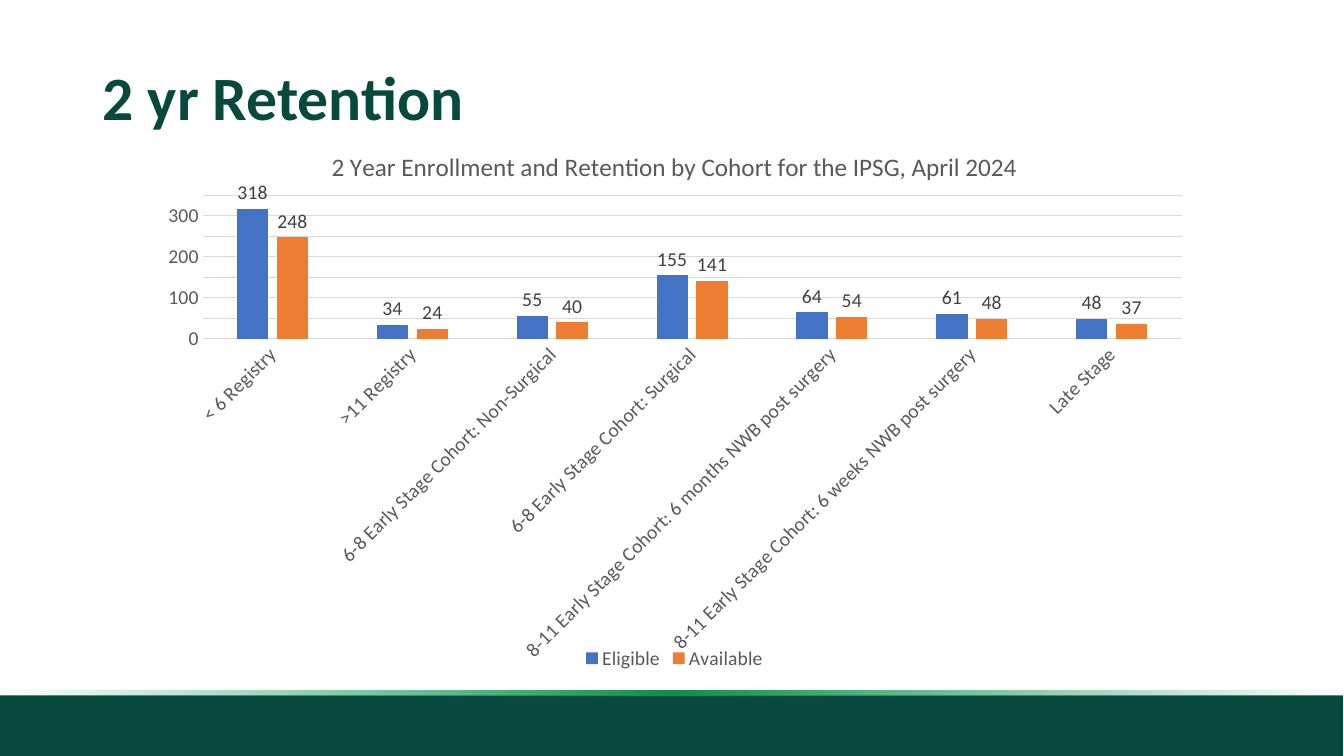
from lxml import etree
from pptx import Presentation
from pptx.chart.data import CategoryChartData
from pptx.dml.color import RGBColor
from pptx.enum.chart import XL_CHART_TYPE, XL_LABEL_POSITION, XL_LEGEND_POSITION, XL_TICK_MARK
from pptx.enum.shapes import MSO_SHAPE
from pptx.enum.text import MSO_ANCHOR, PP_ALIGN
from pptx.oxml import parse_xml
from pptx.oxml.ns import nsdecls, qn
from pptx.util import Inches, Pt

COLUMNS = XL_CHART_TYPE.COLUMN_CLUSTERED
OUTSIDE_END = XL_LABEL_POSITION.OUTSIDE_END
LEGEND_BOTTOM = XL_LEGEND_POSITION.BOTTOM
NO_TICKS = XL_TICK_MARK.NONE
RECTANGLE = MSO_SHAPE.RECTANGLE
MIDDLE = MSO_ANCHOR.MIDDLE
LEFT = PP_ALIGN.LEFT

DARK_GREEN = RGBColor(0x07, 0x49, 0x3C)
BLUE = RGBColor(0x44, 0x72, 0xC4)
ORANGE = RGBColor(0xED, 0x7D, 0x31)
GRAY = RGBColor(0x59, 0x59, 0x59)
LABEL_GRAY = RGBColor(0x40, 0x40, 0x40)
GRID_GRAY = RGBColor(0xD9, 0xD9, 0xD9)
STRIPE_EDGE_LEFT = RGBColor(0x0D, 0x9D, 0x4F)
STRIPE_CENTER = RGBColor(0x0C, 0x90, 0x49)
STRIPE_EDGE_RIGHT = RGBColor(0x0F, 0xAB, 0x56)

FONT = "Calibri"
CHART_LEFT, CHART_TOP, CHART_WIDTH, CHART_HEIGHT = 1.46, 1.27, 10.46, 5.42
PLOT_LEFT, PLOT_TOP, PLOT_WIDTH, PLOT_HEIGHT = 2.01, 1.94, 9.71, 1.42
COHORTS = [
    "< 6 Registry",
    ">11 Registry",
    "6-8 Early Stage Cohort: Non-Surgical",
    "6-8 Early Stage Cohort: Surgical",
    "8-11 Early Stage Cohort: 6 months NWB post surgery",
    "8-11 Early Stage Cohort: 6 weeks NWB post surgery",
    "Late Stage",
]
ENROLLMENT = [
    ("Eligible", [318, 34, 55, 155, 64, 61, 48], BLUE),
    ("Available", [248, 24, 40, 141, 54, 48, 37], ORANGE),
]


def style_font(font, size, color, bold=False):
    font.name = FONT
    font.size = Pt(size)
    font.bold = bold
    font.color.rgb = color


def style_line(line, color):
    line.color.rgb = color
    line.width = Pt(0.75)


def add_band(slide, left, top, width, height):
    band = slide.shapes.add_shape(
        RECTANGLE, Inches(left), Inches(top), Inches(width), Inches(height))
    band.shadow.inherit = False
    band.line.fill.background()
    band.fill.solid()
    band.fill.fore_color.rgb = DARK_GREEN
    return band


def fade_to_edges(band):
    """Fill a band with green that turns transparent at both ends."""
    stops = [(0, STRIPE_EDGE_LEFT, 0), (50, STRIPE_CENTER, 100), (100, STRIPE_EDGE_RIGHT, 0)]
    gradient = parse_xml(f'<a:gradFill {nsdecls("a")} rotWithShape="1"><a:gsLst/>'
                         '<a:lin ang="10800000" scaled="0"/></a:gradFill>')
    for position, color, opacity in stops:
        stop = etree.SubElement(gradient[0], qn("a:gs"), pos=str(position * 1000))
        rgb = etree.SubElement(stop, qn("a:srgbClr"), val=str(color))
        etree.SubElement(rgb, qn("a:alpha"), val=str(opacity * 1000))
    properties = band._element.spPr
    properties.replace(properties.find(qn("a:solidFill")), gradient)


def set_title(slide, text):
    title = slide.shapes.title
    title.left, title.top = Inches(0.92), Inches(0.4)
    title.width, title.height = Inches(11.5), Inches(1.19)
    title.text_frame.text = text
    title.text_frame.vertical_anchor = MIDDLE
    paragraph = title.text_frame.paragraphs[0]
    paragraph.alignment = LEFT
    paragraph.line_spacing = 0.9
    style_font(paragraph.font, 44, DARK_GREEN, bold=True)


def style_axes(chart):
    cohorts, counts = chart.category_axis, chart.value_axis
    for axis in (cohorts, counts):
        axis.major_tick_mark = axis.minor_tick_mark = NO_TICKS
        style_font(axis.tick_labels.font, 14, GRAY)
    style_line(cohorts.format.line, GRID_GRAY)
    cohorts._element.find(qn("c:txPr")).find(qn("a:bodyPr")).set("rot", "-2700000")
    counts.minimum_scale, counts.maximum_scale, counts.major_unit = 0, 350, 50
    counts.format.line.fill.background()
    style_line(counts.major_gridlines.format.line, GRID_GRAY)


def style_columns(plot):
    plot.gap_width = 219
    plot.overlap = -27
    plot.vary_by_categories = False
    for series, (_, _, color) in zip(plot.series, ENROLLMENT):
        series.format.fill.solid()
        series.format.fill.fore_color.rgb = color
        labels = series.data_labels
        labels.show_value = True
        labels.position = OUTSIDE_END
        style_font(labels.font, 14, LABEL_GRAY)


def place_plot(chart):
    """Fix the area inside the axes, given in slide inches, within the chart frame."""
    plot_area = chart._chartSpace.chart.plotArea
    for earlier_layout in plot_area.findall(qn("c:layout")):
        plot_area.remove(earlier_layout)
    layout = etree.Element(qn("c:layout"))
    manual = etree.SubElement(layout, qn("c:manualLayout"))
    settings = [
        ("layoutTarget", "inner"), ("xMode", "edge"), ("yMode", "edge"),
        ("x", (PLOT_LEFT - CHART_LEFT) / CHART_WIDTH),
        ("y", (PLOT_TOP - CHART_TOP) / CHART_HEIGHT),
        ("w", PLOT_WIDTH / CHART_WIDTH),
        ("h", PLOT_HEIGHT / CHART_HEIGHT),
    ]
    for tag, value in settings:
        etree.SubElement(manual, qn(f"c:{tag}"), val=str(value))
    plot_area.insert(0, layout)


def add_retention_chart(slide):
    data = CategoryChartData()
    data.categories = COHORTS
    for name, values, _ in ENROLLMENT:
        data.add_series(name, values)
    chart = slide.shapes.add_chart(
        COLUMNS, Inches(CHART_LEFT), Inches(CHART_TOP),
        Inches(CHART_WIDTH), Inches(CHART_HEIGHT), data).chart
    chart.font.name = FONT
    chart.font.size = Pt(10)
    chart.has_title = True
    heading = chart.chart_title.text_frame
    heading.text = "2 Year Enrollment and Retention by Cohort for the IPSG, April 2024"
    style_font(heading.paragraphs[0].font, 18, GRAY)
    chart.chart_title.include_in_layout = False
    chart.has_legend = True
    chart.legend.position = LEGEND_BOTTOM
    chart.legend.include_in_layout = False
    style_font(chart.legend.font, 14, GRAY)
    style_axes(chart)
    style_columns(chart.plots[0])
    place_plot(chart)


def main():
    presentation = Presentation()
    presentation.slide_width = Inches(13.33)
    presentation.slide_height = Inches(7.5)
    slide = presentation.slides.add_slide(presentation.slide_layouts.get_by_name("Title Only"))
    add_band(slide, 0, 6.9, 13.32, 0.6)
    fade_to_edges(add_band(slide, 0, 6.85, 13.33, 0.05))
    set_title(slide, "2 yr Retention")
    add_retention_chart(slide)
    presentation.save("out.pptx")


if __name__ == "__main__":
    main()
